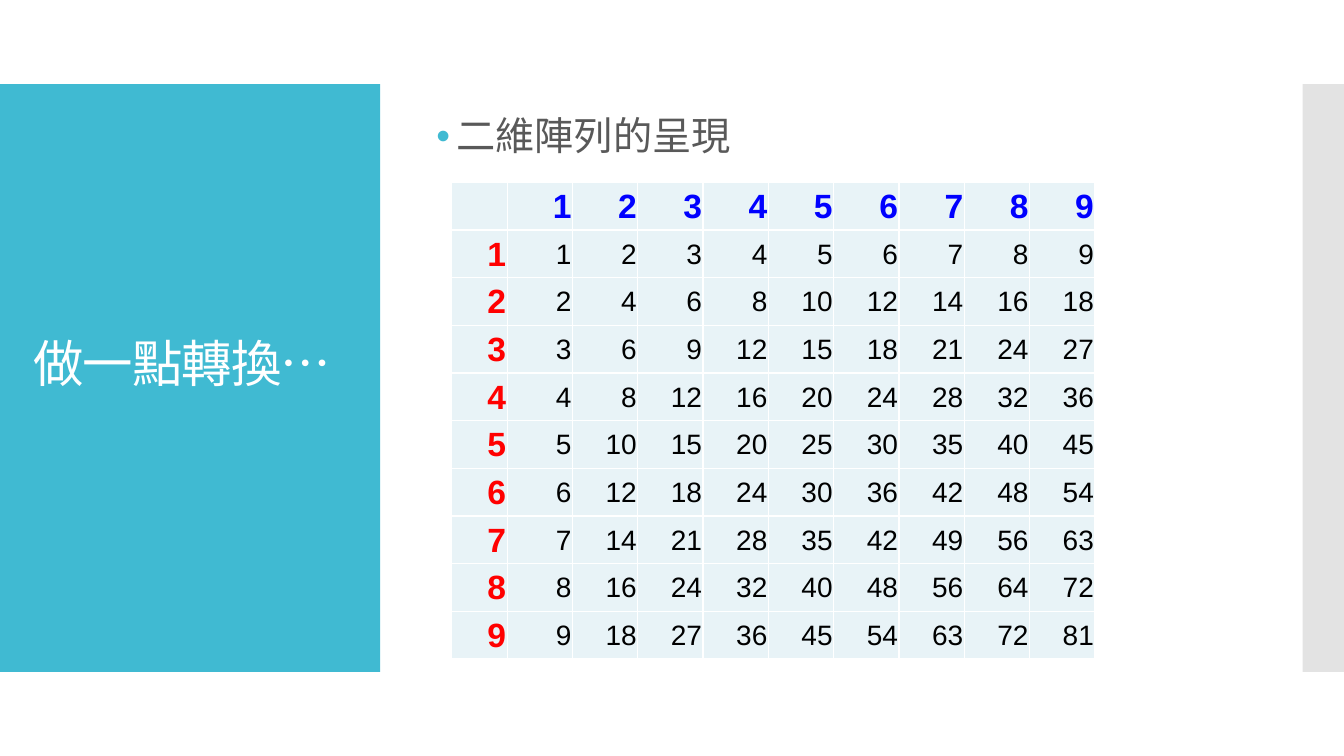
from lxml import etree
from pptx import Presentation
from pptx.dml.color import RGBColor
from pptx.enum.shapes import MSO_SHAPE
from pptx.enum.text import MSO_ANCHOR, PP_ALIGN
from pptx.oxml.ns import qn
from pptx.util import Inches, Pt

RECTANGLE = MSO_SHAPE.RECTANGLE
MIDDLE = MSO_ANCHOR.MIDDLE
RIGHT = PP_ALIGN.RIGHT

TEAL = RGBColor(0x40, 0xBA, 0xD2)
GREY = RGBColor(0xC8, 0xC8, 0xC8)
WHITE = RGBColor(0xFF, 0xFF, 0xFF)
DARK_GREY = RGBColor(0x59, 0x59, 0x59)
PALE_BLUE = RGBColor(0xE8, 0xF3, 0xF7)
BLUE = RGBColor(0x00, 0x00, 0xFF)
RED = RGBColor(0xFF, 0x00, 0x00)
BLACK = RGBColor(0x00, 0x00, 0x00)

PAGE_WIDTH, PAGE_HEIGHT = 13.33, 7.5
BAND_TOP, BAND_HEIGHT = PAGE_HEIGHT / 9, PAGE_HEIGHT * 7 / 9
LARGEST = 9

COLUMN_HEADER = {"size": Pt(24), "bold": True, "color": BLUE}
ROW_HEADER = {"size": Pt(24), "bold": True, "color": RED}
PRODUCT = {"size": Pt(20), "bold": False, "color": BLACK}
CELL_FORMAT = {
    "margin_left": Inches(0.01), "margin_top": Inches(0.01),
    "margin_right": Inches(0.01), "margin_bottom": 0,
    "vertical_anchor": MIDDLE,
}


def inches(box):
    return [Inches(length) for length in box]


def add_child(parent, tag, **attributes):
    return etree.SubElement(parent, qn(tag), attributes)


def add_span(para, text, name, size, color, bold=False):
    span = para.add_run()
    span.text = text
    for key, value in {"name": name, "size": size, "bold": bold}.items():
        setattr(span.font, key, value)
    span.font.color.rgb = color
    return span


def add_panel(page, box, color):
    panel = page.shapes.add_shape(RECTANGLE, *inches(box))
    panel.shadow.inherit = False
    panel.fill.solid()
    panel.fill.fore_color.rgb = color
    panel.line.fill.background()
    return panel


def add_text(page, box, text, size, color):
    """Add a one-paragraph text box and return its paragraph and span."""
    frame = page.shapes.add_textbox(*inches(box)).text_frame
    frame.word_wrap = True
    frame.vertical_anchor = MIDDLE
    para = frame.paragraphs[0]
    para.line_spacing = 0.9
    return para, add_span(para, text, "Calibri", size, color)


def add_title_panel(page, box):
    left, top, width, height = box
    add_panel(page, box, TEAL)
    title_box = (left + 0.23, top + height * 0.05, width - 0.55, height * 0.86)
    _, span = add_text(page, title_box, "做一點轉換…", Pt(36), WHITE)
    span.font._element.set("spc", "-60")


def add_side_strip(page, box):
    strip = add_panel(page, box, GREY)
    color = strip.fill._xPr.find(".//" + qn("a:srgbClr"))
    add_child(color, "a:alpha", val="50000")


def add_bullet(page, box):
    para, _ = add_text(page, box, "二維陣列的呈現", Pt(28), DARK_GREY)
    para.space_before = Pt(12)
    properties = para._p.get_or_add_pPr()
    properties.set("marL", str(Inches(0.2)))
    properties.set("indent", str(-Inches(0.2)))
    add_child(add_child(properties, "a:buClr"), "a:srgbClr", val=str(TEAL))
    add_child(properties, "a:buFont", typeface="Arial")
    add_child(properties, "a:buChar", char="•")


def add_borders(cell):
    properties = cell._tc.get_or_add_tcPr()
    for side in ("a:lnL", "a:lnR", "a:lnT", "a:lnB"):
        line = add_child(properties, side, w=str(Pt(1)))
        add_child(add_child(line, "a:solidFill"), "a:srgbClr", val=str(WHITE))


def fill_cell(cell, row, column):
    """Row and column 0 hold the factors, the other cells their products."""
    for key, value in CELL_FORMAT.items():
        setattr(cell, key, value)
    add_borders(cell)
    cell.fill.solid()
    cell.fill.fore_color.rgb = PALE_BLUE
    if row == column == 0:
        return
    style = COLUMN_HEADER if row == 0 else ROW_HEADER if column == 0 else PRODUCT
    para = cell.text_frame.paragraphs[0]
    para.alignment = RIGHT
    add_span(para, str((row or 1) * (column or 1)), "Arial", **style)


def add_times_table(page, box):
    count = LARGEST + 1
    first_width = 0.55
    table = page.shapes.add_table(count, count, *inches(box)).table
    for index in range(count):
        width = (box[2] - first_width) / LARGEST if index else first_width
        table.columns[index].width = Inches(width)
        table.rows[index].height = Inches(box[3] / count)
    for row in range(count):
        for column in range(count):
            fill_cell(table.cell(row, column), row, column)


def main():
    deck = Presentation()
    deck.slide_width, deck.slide_height = Inches(PAGE_WIDTH), Inches(PAGE_HEIGHT)
    page = deck.slides.add_slide(deck.slide_layouts[6])
    strip_width = 0.41
    add_title_panel(page, (0, BAND_TOP, 3.77, BAND_HEIGHT))
    add_side_strip(page, (PAGE_WIDTH - strip_width, BAND_TOP, strip_width, BAND_HEIGHT))
    add_bullet(page, (4.23, 0.94, 8, 0.86))
    add_times_table(page, (4.48, 1.81, 6.38, 4.73))
    deck.save("out.pptx")


if __name__ == "__main__":
    main()
